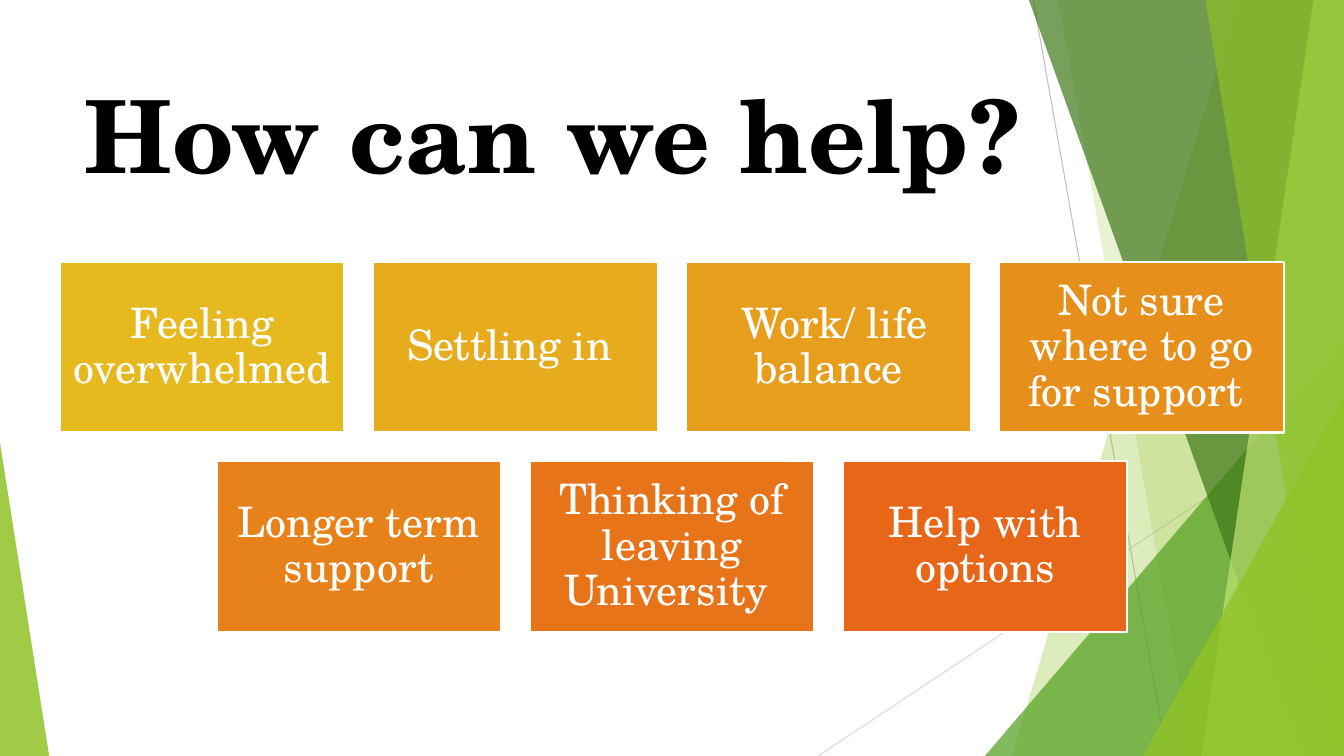
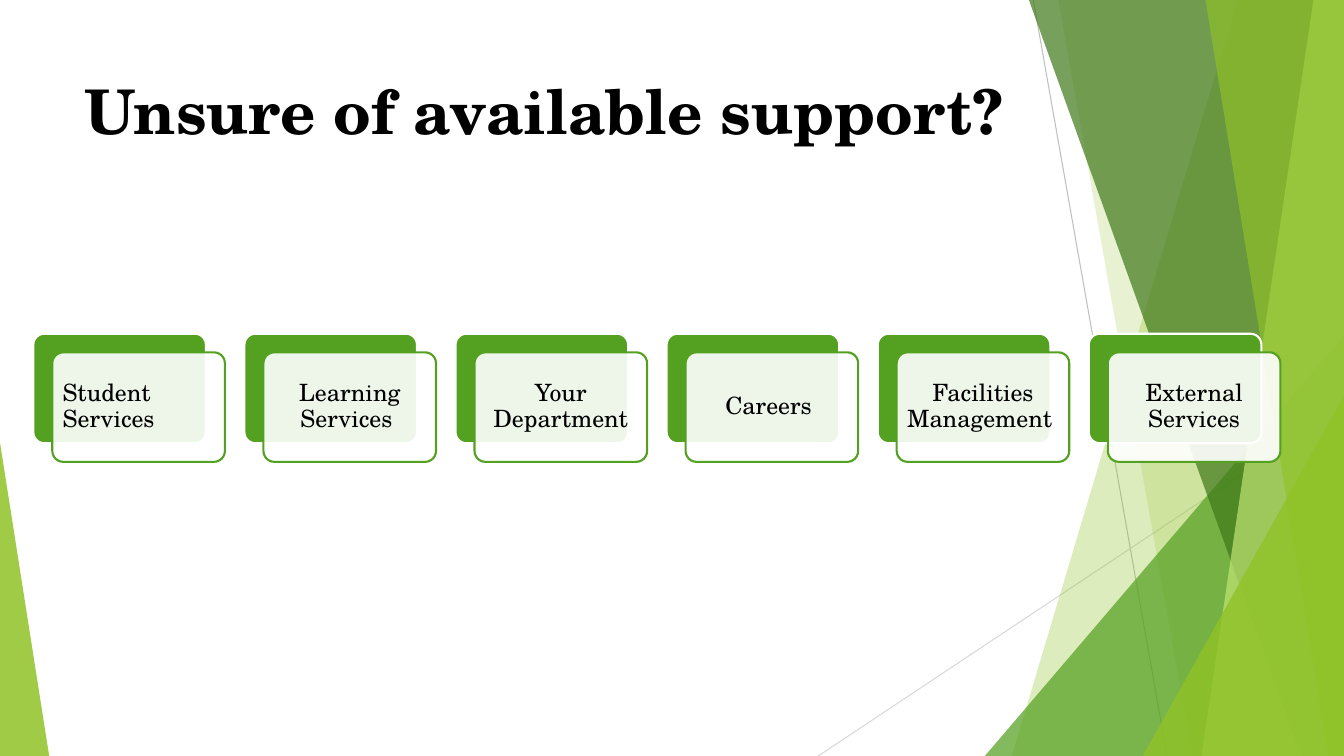
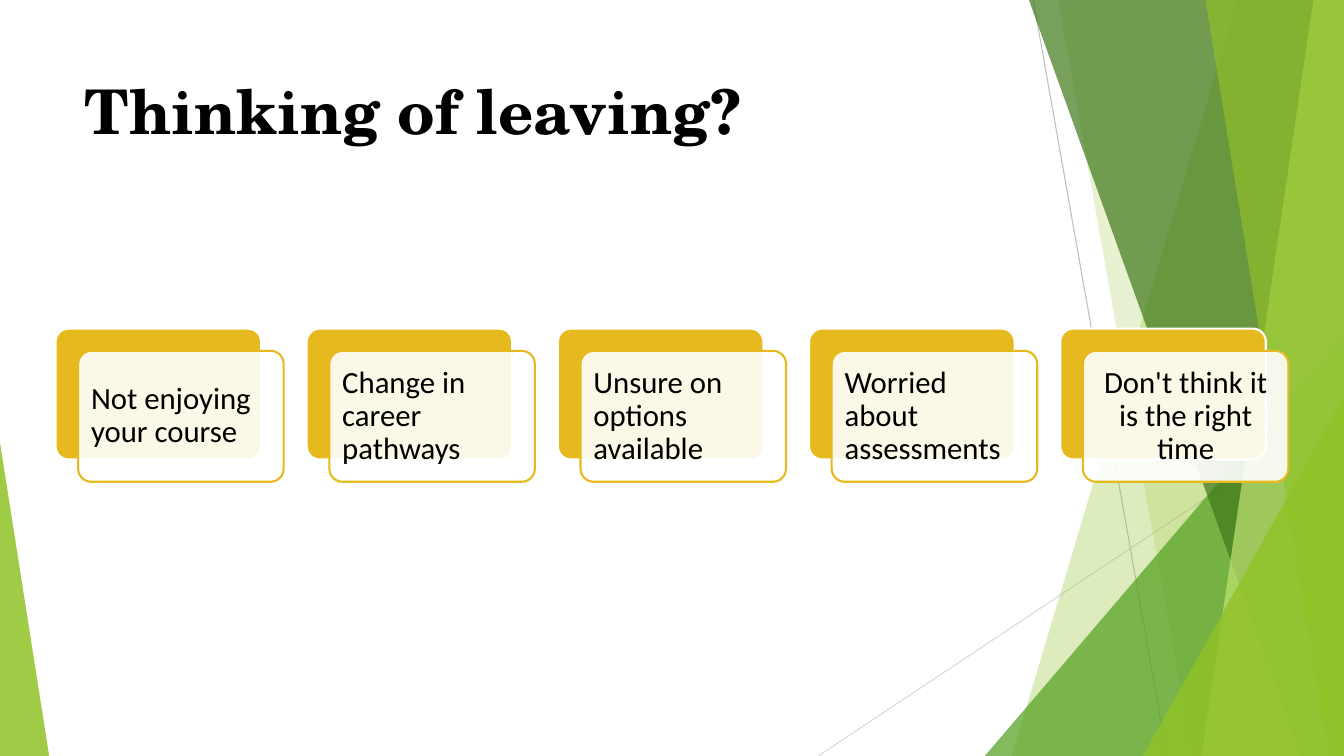
from dataclasses import dataclass

from lxml import etree
from pptx import Presentation
from pptx.dml.color import RGBColor
from pptx.enum.shapes import MSO_CONNECTOR, MSO_SHAPE
from pptx.enum.text import MSO_ANCHOR, MSO_AUTO_SIZE, PP_ALIGN
from pptx.oxml.ns import qn
from pptx.util import Cm, Pt

LEFT, CENTER = PP_ALIGN.LEFT, PP_ALIGN.CENTER
TOP, MIDDLE = MSO_ANCHOR.TOP, MSO_ANCHOR.MIDDLE
RECT, ROUND = MSO_SHAPE.RECTANGLE, MSO_SHAPE.ROUNDED_RECTANGLE
WEDGE = MSO_SHAPE.ISOSCELES_TRIANGLE
STRAIGHT = MSO_CONNECTOR.STRAIGHT
NO_FIT = MSO_AUTO_SIZE.NONE


@dataclass(frozen=True)
class Theme:
    wide: float = 33.87
    high: float = 19.05
    serif: str = "TeX Gyre Schola"
    sans: str = "Calibri"
    black: str = "000000"
    white: str = "FFFFFF"
    lime: str = "90C226"
    pale: str = "C0E474"
    green: str = "54A021"
    moss: str = "3F7819"
    gold: str = "E6B91E"
    gray: str = "BFBFBF"
    silver: str = "D9D9D9"
    ramp: tuple = ("E6B91E", "E6AC1D", "E69E1C", "E6901B",
                   "E7821A", "E77419", "E76618")
    huge: int = 72
    head: int = 44
    tile: int = 30
    note: int = 22
    small: int = 17
    edge: float = 1.5
    hair: float = 0.75


def assign(item, values):
    for name, value in values.items():
        setattr(item, name, value)


class Deck:
    def __init__(self, theme):
        self.theme = theme
        self.show = Presentation()
        assign(self.show, {"slide_width": Cm(theme.wide),
                           "slide_height": Cm(theme.high)})
        self.layout = self.show.slide_layouts[5]
        for holder in list(self.layout.placeholders)[1:]:
            holder.element.getparent().remove(holder.element)
        self.slide = None

    def page(self, title, size, wide, high):
        self.slide = self.show.slides.add_slide(self.layout)
        holder = self.slide.shapes.title
        assign(holder, {"left": Cm(1.88), "top": Cm(1.7),
                        "width": Cm(wide), "height": Cm(high)})
        self.label(holder, title, size, self.theme.black, self.theme.serif,
                   LEFT, TOP, bold=True, space=1.0)

    def label(self, shape, text, size, color, font, align, anchor=MIDDLE,
              pad=None, bold=False, space=0.9):
        frame = shape.text_frame
        assign(frame, {"text": text, "word_wrap": True,
                       "auto_size": NO_FIT, "vertical_anchor": anchor})
        if pad is not None:
            assign(frame, {"margin_" + side: Cm(pad)
                           for side in ("left", "top", "right", "bottom")})
        para = frame.paragraphs[0]
        assign(para, {"alignment": align, "line_spacing": space})
        face = para.runs[0].font
        assign(face, {"name": font, "size": Pt(size), "bold": bold})
        face.color.rgb = RGBColor.from_string(color)

    def paint(self, shape, fill, alpha=100, line=None):
        shape.shadow.inherit = False
        shape.fill.solid()
        shape.fill.fore_color.rgb = RGBColor.from_string(fill)
        if alpha < 100:
            color = shape.element.spPr.find(qn("a:solidFill"))[0]
            etree.SubElement(color, qn("a:alpha"), val=str(alpha * 1000))
        if line:
            shape.line.color.rgb = RGBColor.from_string(line)
            shape.line.width = Pt(self.theme.edge)
        else:
            shape.line.fill.background()
        return shape

    def box(self, kind, left, top, wide, high, fill, alpha=100, line=None,
            adjust=None):
        shape = self.slide.shapes.add_shape(
            kind, Cm(left), Cm(top), Cm(wide), Cm(high))
        if adjust is not None:
            shape.adjustments[0] = adjust
        return self.paint(shape, fill, alpha, line)

    def line(self, start, end, color):
        wire = self.slide.shapes.add_connector(
            STRAIGHT, *(Cm(value) for value in start + end))
        wire.line.color.rgb = RGBColor.from_string(color)
        wire.line.width = Pt(self.theme.hair)
        etree.SubElement(wire.element.spPr, qn("a:effectLst"))
        return wire

    def band(self, upper, lower, fill, alpha):
        right, base = Cm(self.theme.wide), Cm(self.theme.high)
        form = self.slide.shapes.build_freeform(Cm(upper), 0)
        form.add_line_segments([(right, 0), (right, base), (Cm(lower), base)])
        return self.paint(form.convert_to_shape(), fill, alpha)

    def wedge(self, left, top, fill, alpha):
        look = self.theme
        return self.box(WEDGE, left, top, look.wide - left, look.high - top,
                        fill, alpha, adjust=1)

    def backdrop(self):
        look = self.theme
        parts = [
            self.line((26.04, 0), (29.41, look.high), look.gray),
            self.line((look.wide, 10.24), (20.62, look.high), look.silver),
            self.band(31.19, 25.5, look.lime, 30),
            self.band(26.67, 30.05, look.lime, 20),
            self.wedge(24.82, 8.46, look.green, 72),
            self.band(25.93, 32.79, look.moss, 70),
            self.band(33.1, 30.28, look.pale, 70),
            self.band(30.38, 33.48, look.lime, 65),
            self.wedge(28.8, 9.98, look.lime, 80),
            self.box(WEDGE, 0, 11.15, 1.24, 7.9, look.lime, 85, adjust=0),
        ]
        for part in parts:
            self.layout.shapes.element.append(part.element)

    def tiles(self, rows):
        look = self.theme
        wide, high, gap = 7.17, 4.3, 0.72
        fills = iter(look.ramp)
        for level, row in enumerate(rows):
            span = len(row) * (wide + gap) - gap
            left = (look.wide - span) / 2
            top = 6.6 + level * (high + gap)
            for index, text in enumerate(row):
                tile = self.box(RECT, left + index * (wide + gap), top, wide,
                                high, next(fills), line=look.white)
                self.label(tile, text, look.tile, look.white, look.serif,
                           CENTER, pad=0.3)

    def cards(self, items, left, top, wide, high, gap, color, size, font, pad):
        look = self.theme
        for index, (text, align) in enumerate(items):
            start = left + index * (wide + gap)
            self.box(ROUND, start, top, wide, high, color,
                     line=look.white, adjust=0.1)
            card = self.box(ROUND, start + 0.11 * wide, top + 0.17 * high,
                            wide, high, look.white, 90, color, 0.1)
            self.label(card, text, size, look.black, font, align, pad=pad)


def main():
    look = Theme()
    deck = Deck(look)

    deck.page("How can we help?", look.huge, 28, 3.33)
    deck.backdrop()
    deck.tiles([
        ["Feeling overwhelmed", "Settling in ", " Work/ life balance",
         "Not sure where to go for support "],
        ["Longer term support", "Thinking of leaving University ",
         "Help with options"],
    ])

    deck.page("Unsure of available support?", look.head, 23.88, 3.66)
    deck.cards([
        ("Student Services ", LEFT),
        ("Learning Services ", CENTER),
        ("Your Department", CENTER),
        ("Careers ", CENTER),
        ("Facilities Management ", CENTER),
        ("External Services", CENTER),
    ], 0.84, 8.41, 4.35, 2.76, 0.97, look.green, look.small, look.serif, 0.18)

    deck.page("Thinking of leaving?", look.head, 23.88, 3.66)
    deck.cards([
        ("Not enjoying your course ", LEFT),
        ("Change in career pathways ", LEFT),
        ("Unsure on options available ", LEFT),
        ("Worried about assessments ", LEFT),
        ("Don't think it is the right time", CENTER),
    ], 1.4, 8.28, 5.18, 3.3, 1.15, look.gold, look.note, look.sans, 0.23)

    deck.show.save("out.pptx")


if __name__ == "__main__":
    main()
